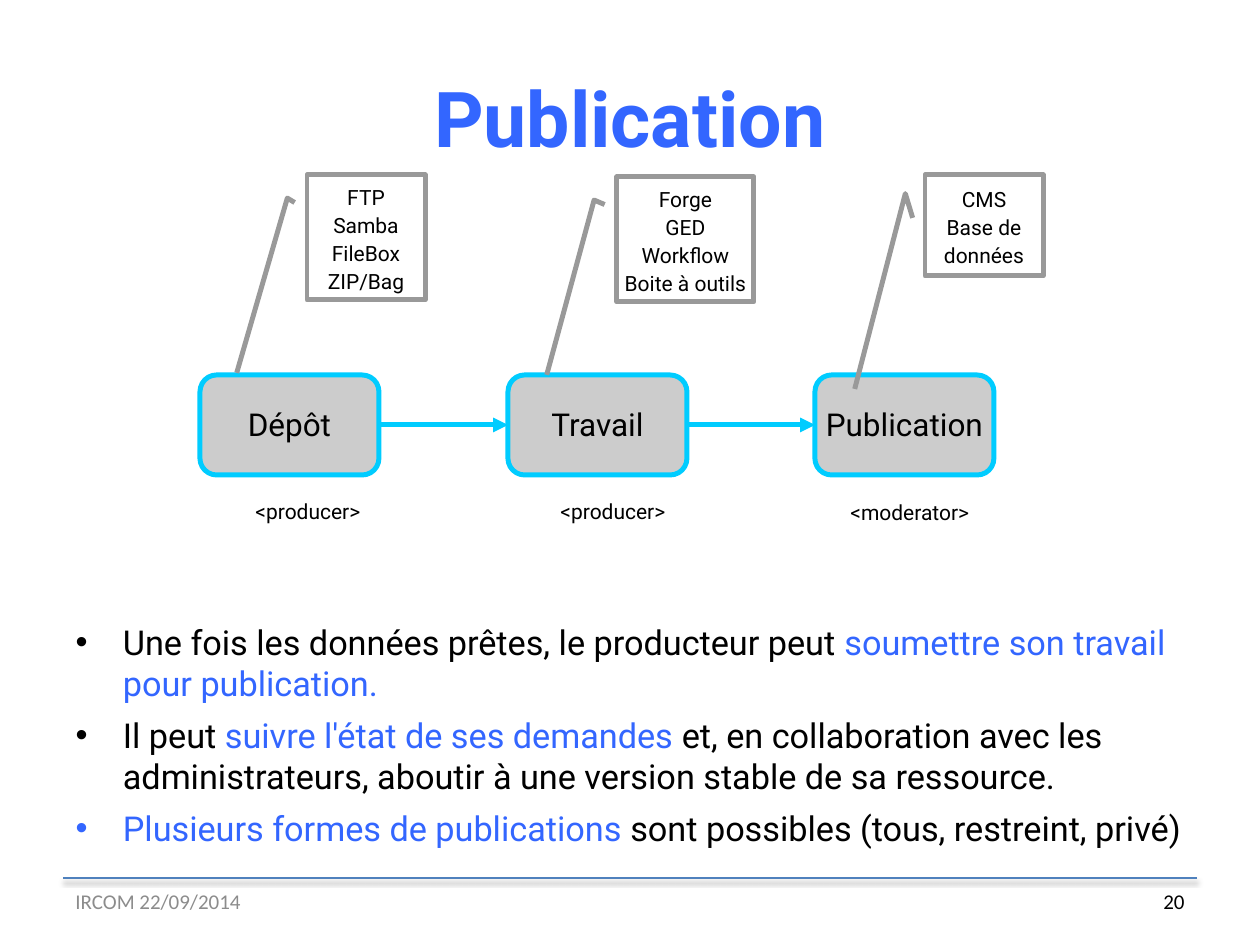
from pptx import Presentation
from pptx import util as u
from pptx.dml.color import RGBColor
from pptx.enum import shapes, text
from pptx.oxml import parse_xml
from pptx.oxml.ns import nsdecls, qn

THEME = {
    "blue": "3366FF", "cyan": "00CCFF", "gray": "999999", "fill": "CCCCCC",
    "rule": "4F81BD", "foot": "8C8C8C", "black": "000000", "white": "FFFFFF",
    "title": 44, "body": 19.6, "stage": 18, "small": 12, "edge": 2.83,
    "font": "Roboto", "plain": "Calibri",
}
SHADOW = (
    '<a:outerShdw blurRad="39400" dist="20300" dir="5400000" rotWithShape="0">'
    '<a:srgbClr val="000000"><a:alpha val="38000"/></a:srgbClr></a:outerShdw>'
)
SCALE = 914400 / 126
MIDDLE = text.MSO_ANCHOR.MIDDLE
ALIGN = text.PP_ALIGN


def write(shape, paras, size, frame={}, para={}, font="font", bold=False):
    tf = shape.text_frame
    for key, val in frame.items():
        setattr(tf, key, val)
    for i, runs in enumerate(paras):
        p = tf.paragraphs[0] if i == 0 else tf.add_paragraph()
        for key, val in para.items():
            setattr(p, key, val)
        if i == 0:
            p.space_before = u.Pt(0)
        for words, color in runs:
            run = p.add_run()
            run.text = words
            look = {"name": THEME[font], "size": u.Pt(THEME[size]), "bold": bold}
            for key, val in look.items():
                setattr(run.font, key, val)
            run.font.color.rgb = RGBColor.from_string(THEME[color])


def px(*nums):
    return [u.Emu(round(n * SCALE)) for n in nums]


deck = Presentation()
deck.slide_width, deck.slide_height = px(1260, 945)
slide = deck.slides.add_slide(deck.slide_layouts[1])
pool = slide.shapes

title, body = slide.placeholders
for holder, box in ((title, (63, 38, 1134, 157)), (body, (63, 615, 1134, 242))):
    holder.left, holder.top, holder.width, holder.height = px(*box)
fixed = {"auto_size": text.MSO_AUTO_SIZE.NONE}
write(title, [[("Publication", "blue")]], "title",
      {**fixed, "vertical_anchor": MIDDLE}, {"alignment": ALIGN.CENTER}, bold=True)
write(body, [
    [("Une fois les données prêtes, le producteur peut ", "black"),
     ("soumettre son travail pour publication.", "blue")],
    [("Il peut ", "black"), ("suivre l'état de ses demandes ", "blue"),
     ("et, en collaboration avec les administrateurs, aboutir à une version "
      "stable de sa ressource.", "black")],
    [("Plusieurs formes de publications ", "blue"),
     ("sont possibles (tous, restreint, privé)", "black")],
], "body", fixed, {"space_before": u.Pt(6)})

side, thin, thick = px(15, 9, 11)
tight = {"word_wrap": False, "vertical_anchor": MIDDLE,
         "margin_left": side, "margin_right": side, "margin_bottom": thin}

stages = [
    ("Dépôt", 200, (307, 175, 118, 125), (0.221, -0.105, 0.185, -0.167, 1.583, -0.596),
     ["FTP", "Samba", "FileBox", "ZIP/Bag"], "<producer>", (243, 489, 132, 40)),
    ("Travail", 508, (617, 177, 137, 125), (0.221, -0.09, 0.185, -0.167, 1.583, -0.513),
     ["Forge", "GED", "Workflow", "Boite à outils"], "<producer>", (548, 489, 132, 40)),
    ("Publication", 815, (925, 175, 118, 101), (0.425, -0.105, 0.185, -0.167, 2.119, -0.596),
     ["CMS", "Base de", "données"], "<moderator>", (838, 490, 145, 40)),
]
kinds = shapes.MSO_SHAPE
for name, left, note, bends, tools, role, spot in stages:
    parts = [
        (kinds.ROUNDED_RECTANGLE, (left, 375, 179, 100), [0.167], "fill", "cyan",
         [name], "stage", 0.93, thick),
        (kinds.LINE_CALLOUT_2, note, bends, "white", "gray",
         tools, "small", 1.12, thin),
    ]
    for kind, box, adjs, fill, edge, lines, size, gap, top in parts:
        shape = pool.add_shape(kind, *px(*box))
        shape.shadow.inherit = False
        for i, val in enumerate(adjs):
            shape.adjustments[i] = val
        shape.fill.solid()
        shape.fill.fore_color.rgb = RGBColor.from_string(THEME[fill])
        shape.line.color.rgb = RGBColor.from_string(THEME[edge])
        shape.line.width = u.Pt(THEME["edge"])
        write(shape, [[(line, "black")] for line in lines], size,
              {**tight, "margin_top": top},
              {"alignment": ALIGN.CENTER, "line_spacing": gap})
    label = pool.add_textbox(*px(*spot))
    write(label, [[(role, "black")]], "small", {"word_wrap": False},
          {"line_spacing": 1.12})

lines = [
    ((379, 425, 508, 425), "cyan", THEME["edge"], True),
    ((687, 425, 815, 425), "cyan", THEME["edge"], True),
    ((63, 878, 1197, 878), "rule", 1, False),
]
for ends, color, width, arrow in lines:
    link = pool.add_connector(shapes.MSO_CONNECTOR.STRAIGHT, *px(*ends))
    link.line.color.rgb = RGBColor.from_string(THEME[color])
    link.line.width = u.Pt(width)
    if arrow:
        tail = link.line._get_or_add_ln().makeelement(qn("a:tailEnd"), {"type": "triangle"})
        link.line._get_or_add_ln().append(tail)
    glow = "" if arrow else SHADOW
    link._element.spPr.append(
        parse_xml(f"<a:effectLst {nsdecls('a')}>{glow}</a:effectLst>"))

for words, left, color, align in (
    ("IRCOM 22/09/2014", 63, "foot", ALIGN.LEFT),
    ("20", 903, "black", ALIGN.RIGHT),
):
    foot = pool.add_textbox(*px(left, 876, 294, 50))
    write(foot, [[(words, color)]], "small",
          {"word_wrap": True, "vertical_anchor": MIDDLE}, {"alignment": align}, "plain")

deck.save("out.pptx")
